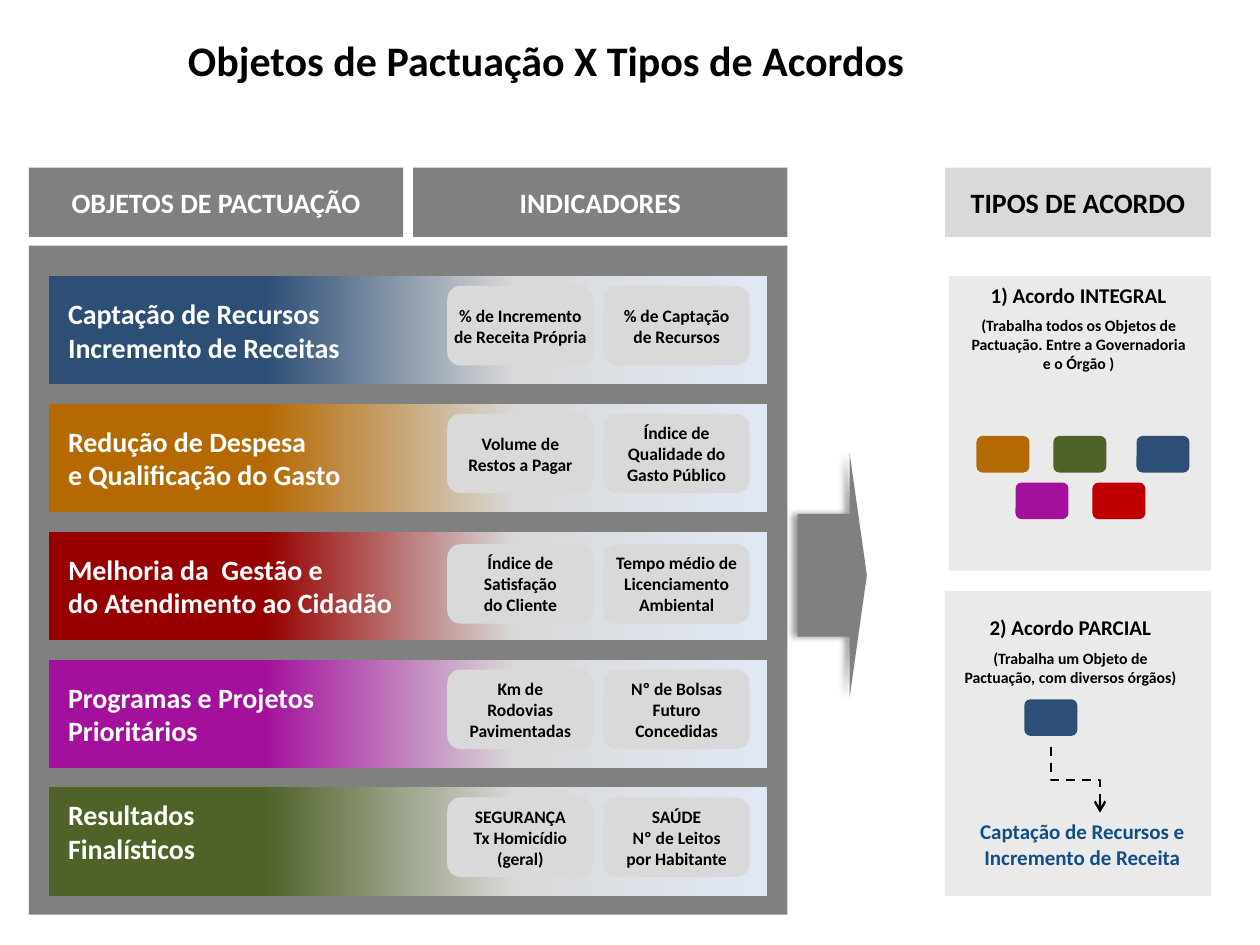
from dataclasses import dataclass

from lxml import etree
from pptx import Presentation
from pptx.dml.color import RGBColor
from pptx.enum.dml import MSO_LINE
from pptx.enum.shapes import MSO_CONNECTOR, MSO_SHAPE
from pptx.enum.text import MSO_ANCHOR, PP_ALIGN
from pptx.oxml.ns import qn
from pptx.util import Inches, Pt

RECTANGLE = MSO_SHAPE.RECTANGLE
ROUNDED = MSO_SHAPE.ROUNDED_RECTANGLE
RIGHT_ARROW = MSO_SHAPE.RIGHT_ARROW
ELBOW = MSO_CONNECTOR.ELBOW
DASH = MSO_LINE.DASH
TOP, MIDDLE = MSO_ANCHOR.TOP, MSO_ANCHOR.MIDDLE
LEFT, CENTER = PP_ALIGN.LEFT, PP_ALIGN.CENTER


@dataclass(frozen=True)
class Theme:
    font: str = "Calibri"
    black: str = "000000"
    white: str = "FFFFFF"
    gray: str = "808080"
    chip: str = "D9D9D9"
    panel: str = "EAEAEA"
    fade: str = "E1E8F5"
    blue: str = "2D4E75"
    orange: str = "B56903"
    dark_red: str = "960000"
    red: str = "C00000"
    purple: str = "A3119C"
    green: str = "4F6228"
    link_blue: str = "104E86"
    title_size: int = 24
    heading_size: int = 16
    body_size: int = 12
    chip_size: int = 10
    note_size: int = 9


class SlideBuilder:
    def __init__(self, slide, theme):
        self.slide = slide
        self.theme = theme

    def set_text(self, shape, text, sizes, color, align=CENTER, anchor=MIDDLE, wrap=False):
        """Fill a shape with bold text; the last size serves all later paragraphs."""
        frame = shape.text_frame
        frame.text = text
        frame.word_wrap = wrap
        frame.vertical_anchor = anchor
        for index, paragraph in enumerate(frame.paragraphs):
            paragraph.alignment = align
            for run in paragraph.runs:
                run.font.name = self.theme.font
                run.font.size = Pt(sizes[min(index, len(sizes) - 1)])
                run.font.bold = True
                run.font.color.rgb = RGBColor.from_string(color)

    def shape(self, kind, left, top, width, height, fill=None):
        shape = self.slide.shapes.add_shape(
            kind, Inches(left), Inches(top), Inches(width), Inches(height))
        shape.shadow.inherit = False
        shape.line.fill.background()
        if fill:
            shape.fill.solid()
            shape.fill.fore_color.rgb = RGBColor.from_string(fill)
        else:
            shape.fill.background()
        return shape

    def text(self, left, top, width, height, text, sizes, color, anchor=TOP):
        box = self.slide.shapes.add_textbox(
            Inches(left), Inches(top), Inches(width), Inches(height))
        self.set_text(box, text, sizes, color, anchor=anchor, wrap=True)
        return box

    def heading(self, left, width, text, fill, color):
        shape = self.shape(RECTANGLE, left, 1.33, width, 0.55, fill)
        self.set_text(shape, text, [self.theme.heading_size], color)

    def gradient_bar(self, left, top, width, height, color):
        bar = self.shape(RECTANGLE, left, top, width, height)
        bar.fill.gradient()
        bar.fill.gradient_angle = 0
        stops = bar._element.spPr.find(".//" + qn("a:gsLst"))
        for stop in list(stops):
            stops.remove(stop)
        for position, value in ((30, color), (65, self.theme.chip), (100, self.theme.fade)):
            stop = etree.SubElement(stops, qn("a:gs"), pos=str(position * 1000))
            etree.SubElement(stop, qn("a:srgbClr"), val=value)

    def row_label(self, left, top, width, height, text):
        label = self.shape(ROUNDED, left, top, width, height)
        self.set_text(label, text, [self.theme.heading_size], self.theme.white, LEFT)

    def indicator(self, left, top, text):
        chip = self.shape(ROUNDED, left, top, 1.16, 0.63, self.theme.chip)
        self.set_text(chip, text, [self.theme.chip_size], self.theme.black)

    def color_key(self, left, top, color):
        self.shape(ROUNDED, left, top, 0.42, 0.29, color)

    def agreement(self, left, top, width, height, title, note):
        box = self.text(left, top, width, height, f"{title}\n{note}",
                        [self.theme.body_size, self.theme.note_size], self.theme.black)
        box.text_frame.paragraphs[1].space_before = Pt(5)

    def block_arrow(self, left, top, width, height):
        arrow = self.shape(RIGHT_ARROW, left, top, width, height, self.theme.gray)
        arrow.adjustments[1] = 0.25
        effects = arrow._element.spPr.find(qn("a:effectLst"))
        shadow = etree.SubElement(
            effects, qn("a:outerShdw"), blurRad=str(Pt(4)), dist=str(Pt(3)),
            dir=str(180 * 60000), algn="r", rotWithShape="0")
        color = etree.SubElement(shadow, qn("a:srgbClr"), val=self.theme.black)
        etree.SubElement(color, qn("a:alpha"), val="40000")

    def down_elbow(self, start_x, start_y, end_x, end_y):
        """Dashed elbow that leaves and arrives vertically: a flipped one turned 270 degrees."""
        center_x, center_y = (start_x + end_x) / 2, (start_y + end_y) / 2
        half_width, half_height = (end_y - start_y) / 2, (end_x - start_x) / 2
        connector = self.slide.shapes.add_connector(
            ELBOW,
            Inches(center_x + half_width), Inches(center_y - half_height),
            Inches(center_x - half_width), Inches(center_y + half_height))
        connector.line.color.rgb = RGBColor.from_string(self.theme.black)
        connector.line.width = Pt(1.3)
        connector.line.dash_style = DASH
        properties = connector._element.spPr
        properties.find(qn("a:xfrm")).set("rot", str(270 * 60000))
        etree.SubElement(properties.find(qn("a:ln")), qn("a:tailEnd"), type="arrow")
        etree.SubElement(properties, qn("a:effectLst"))


def main():
    theme = Theme()
    presentation = Presentation()
    presentation.slide_width = Inches(10)
    presentation.slide_height = Inches(7.5)
    slide = presentation.slides.add_slide(presentation.slide_layouts[6])
    builder = SlideBuilder(slide, theme)

    # Title and column headings
    builder.text(1.17, 0.08, 6.33, 0.78, "Objetos de Pactuação X Tipos de Acordos",
                 [theme.title_size], theme.black, MIDDLE)
    builder.heading(0.23, 2.97, "OBJETOS DE PACTUAÇÃO", theme.gray, theme.white)
    builder.heading(3.28, 2.97, "INDICADORES", theme.gray, theme.white)
    builder.heading(7.5, 2.11, "TIPOS DE ACORDO", theme.chip, theme.black)

    # Objects with their indicators: color, label, label shift, indicator shift, indicators
    builder.shape(RECTANGLE, 0.23, 1.95, 6.02, 5.31, theme.gray)
    rows = [
        (theme.blue, "Captação de Recursos\nIncremento de Receitas", 0, 0.08,
         ["% de Incremento\nde Receita Própria", "% de Captação\nde Recursos"]),
        (theme.orange, "Redução de Despesa\ne Qualificação do Gasto", 0, 0.08,
         ["Volume de\nRestos a Pagar", "Índice de\nQualidade do\nGasto Público"]),
        (theme.dark_red, "Melhoria da  Gestão e\ndo Atendimento ao Cidadão", 0, 0.1,
         ["Índice de\nSatisfação\ndo Cliente", "Tempo médio de\nLicenciamento\nAmbiental"]),
        (theme.purple, "Programas e Projetos\nPrioritários", 0, 0.08,
         ["Km de\nRodovias\nPavimentadas", "Nº de Bolsas\nFuturo\nConcedidas"]),
        (theme.green, "Resultados\nFinalísticos", -0.08, 0.08,
         ["SEGURANÇA\nTx Homicídio\n(geral)", "SAÚDE\nNº de Leitos\npor Habitante"]),
    ]
    row_height, row_pitch = 0.86, 4.06 / 4
    for index, (color, label, label_shift, chip_shift, indicators) in enumerate(rows):
        top = 2.19 + index * row_pitch
        builder.gradient_bar(0.39, top, 5.7, row_height, color)
        builder.row_label(0.4, top + label_shift, 2.89, row_height, label)
        for column, indicator in enumerate(indicators):
            builder.indicator(3.55 + column * 1.24, top + chip_shift, indicator)

    # Arrow towards the agreement types
    builder.block_arrow(6.33, 3.59, 0.55, 1.95)

    # Full agreement
    builder.shape(RECTANGLE, 7.53, 2.19, 2.08, 2.34, theme.panel)
    builder.agreement(
        7.6, 2.19, 1.92, 0.83, "1) Acordo INTEGRAL",
        "(Trabalha todos os Objetos de Pactuação. Entre a Governadoria e o Órgão )")
    for left, top, color in (
            (7.75, 3.46, theme.orange), (8.36, 3.46, theme.green), (9.02, 3.46, theme.blue),
            (8.06, 3.83, theme.purple), (8.67, 3.83, theme.red)):
        builder.color_key(left, top, color)

    # Partial agreement
    builder.shape(RECTANGLE, 7.5, 4.69, 2.11, 2.42, theme.panel)
    builder.agreement(
        7.52, 4.83, 1.95, 0.68, "2) Acordo PARCIAL",
        "(Trabalha um Objeto de Pactuação, com diversos órgãos)")
    builder.color_key(8.13, 5.55, theme.blue)
    builder.down_elbow(8.34, 5.93, 8.73, 6.45)
    builder.text(7.65, 6.45, 1.88, 0.5, "Captação de Recursos e Incremento de Receita",
                 [theme.body_size], theme.link_blue)

    presentation.save("out.pptx")


if __name__ == "__main__":
    main()
